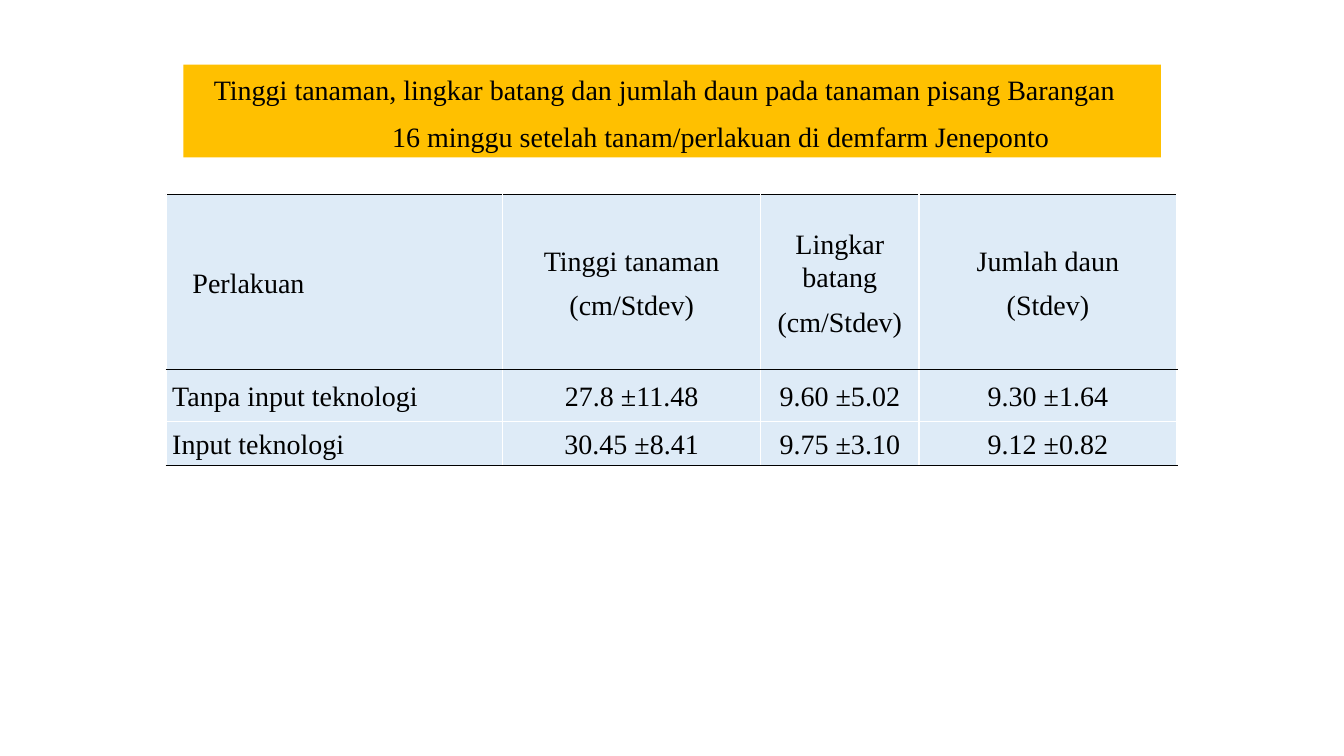
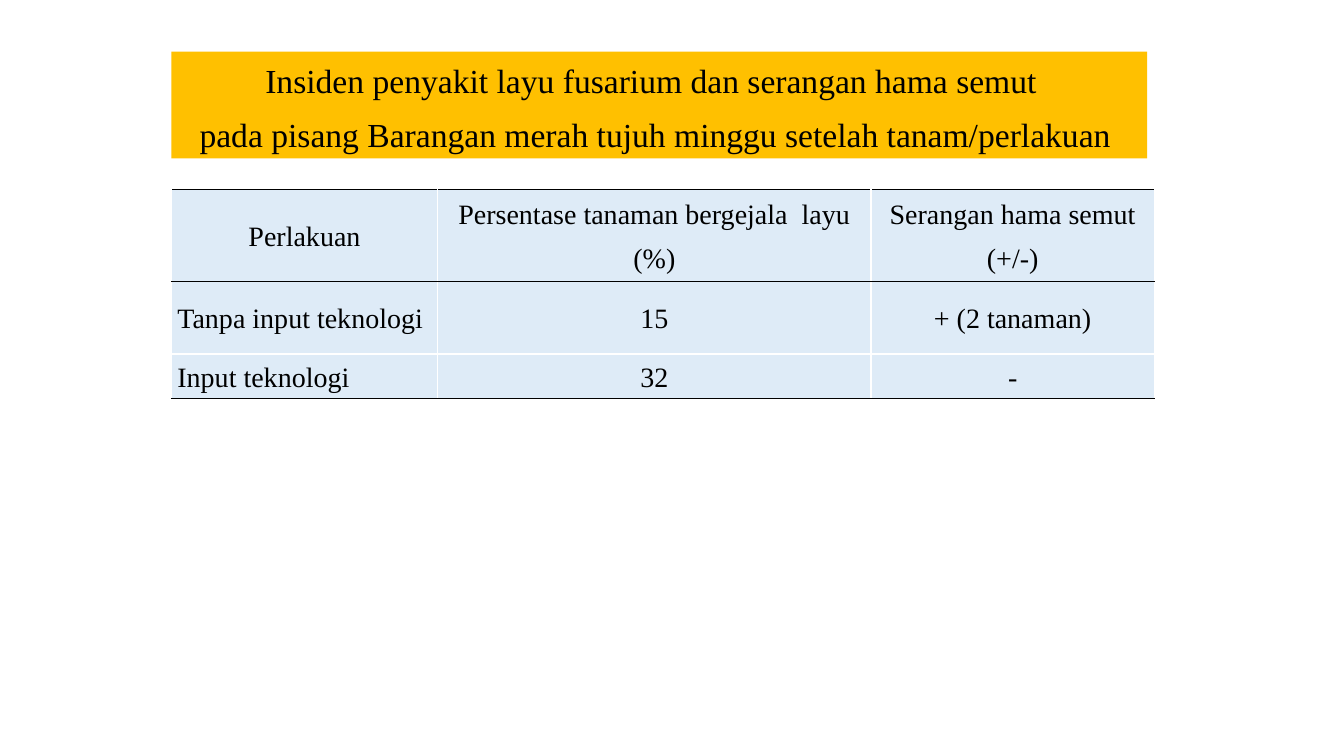
from lxml.etree import SubElement
from pptx import Presentation
from pptx.dml.color import RGBColor
from pptx.enum.shapes import MSO_SHAPE as SHAPE
from pptx.enum.text import MSO_ANCHOR as ANCHOR, PP_ALIGN as ALIGN
from pptx.oxml.ns import qn
from pptx.util import Cm, Pt

AMBER = RGBColor(0xFF, 0xC0, 0x00)
PALE_BLUE = RGBColor(0xDE, 0xEB, 0xF7)
BLACK = RGBColor(0, 0, 0)
WHITE = RGBColor(0xFF, 0xFF, 0xFF)
FONT = "Times New Roman"
PARAGRAPH = {"line_spacing": 1.07, "space_after": Pt(8)}
CELL = {
    "margin_left": Cm(0.15), "margin_right": Cm(0.15),
    "margin_top": Cm(0.03), "margin_bottom": 0,
    "vertical_anchor": ANCHOR.MIDDLE,
}
BANNER = {
    "word_wrap": True, "vertical_anchor": ANCHOR.TOP,
    "margin_left": Cm(0.25), "margin_right": Cm(0.45),
    "margin_top": Cm(0.13), "margin_bottom": Cm(0.13),
}

SLIDES = [
    {
        "banner": {
            "box": (4.62, 1.63, 24.64, 2.34), "size": 20, "indents": (0, 2.65),
            "lines": ["Tinggi tanaman, lingkar batang dan jumlah daun pada tanaman pisang Barangan ",
                      "16 minggu setelah tanam/perlakuan di demfarm Jeneponto"],
        },
        "table": {
            "left": 4.19, "top": 4.9,
            "widths": (8.48, 6.5, 3.99, 6.5), "heights": (4.42, 1.3, 1.12),
            "corner": (ALIGN.LEFT, 0.51),
            "rows": [
                ["Perlakuan", "Tinggi tanaman\n(cm/Stdev)", "Lingkar batang\n(cm/Stdev)", "Jumlah daun\n(Stdev)"],
                ["Tanpa input teknologi", "27.8 ±11.48", "9.60 ±5.02", "9.30 ±1.64"],
                ["Input teknologi", "30.45 ±8.41", "9.75 ±3.10", "9.12 ±0.82"],
            ],
        },
    },
    {
        "banner": {
            "box": (4.32, 1.3, 24.59, 2.69), "size": 24, "indents": (0, 0),
            "lines": ["Insiden penyakit layu fusarium dan serangan hama semut ",
                      "pada pisang Barangan merah tujuh minggu setelah tanam/perlakuan"],
        },
        "table": {
            "left": 4.32, "top": 4.78,
            "widths": (6.71, 10.92, 7.14), "heights": (2.31, 1.83, 1.12),
            "corner": (ALIGN.CENTER, 0),
            "rows": [
                ["Perlakuan", "Persentase tanaman bergejala  layu\n(%)", "Serangan hama semut\n(+/-)"],
                ["Tanpa input teknologi", "15", "+ (2 tanaman)"],
                ["Input teknologi", "32", "-"],
            ],
        },
    },
]


def set_all(target, values):
    """Set every attribute named in a dict of format values."""
    for name, value in values.items():
        setattr(target, name, value)


def write_lines(tf, lines, size, align, indents):
    """Write one paragraph per line, each with its own left indent."""
    for i, (line, indent) in enumerate(zip(lines, indents)):
        p = tf.add_paragraph() if i else tf.paragraphs[0]
        set_all(p, {**PARAGRAPH, "alignment": align})
        if indent:
            set_all_xml = {"marL": str(Cm(indent)), "indent": "0"}
            p._p.get_or_add_pPr().attrib.update(set_all_xml)
        r = p.add_run()
        r.text = line
        set_all(r.font, {"name": FONT, "size": Pt(size), "bold": False})
        r.font.color.rgb = BLACK


def add_banner(s, box, size, indents, lines):
    """Draw the amber title band in its box."""
    sp = s.shapes.add_shape(SHAPE.RECTANGLE, *map(Cm, box))
    sp.shadow.inherit = False
    sp.fill.solid()
    sp.fill.fore_color.rgb = AMBER
    sp.line.fill.background()
    set_all(sp.text_frame, BANNER)
    write_lines(sp.text_frame, lines, size, ALIGN.CENTER, indents)


def set_borders(cell, top, bottom):
    """Give a cell white sides and the given top and bottom colours."""
    tc_pr = cell._tc.get_or_add_tcPr()
    for side, color in (("L", WHITE), ("R", WHITE), ("T", top), ("B", bottom)):
        ln = SubElement(tc_pr, qn(f"a:ln{side}"), w=str(Pt(1)))
        fill = SubElement(ln, qn("a:solidFill"))
        SubElement(fill, qn("a:srgbClr"), val=str(color))


def add_data_table(s, left, top, widths, heights, corner, rows):
    """Draw the table with rules above and below the header and at the end."""
    frame = s.shapes.add_table(len(rows), len(widths), Cm(left), Cm(top),
                               Cm(sum(widths)), Cm(sum(heights)))
    table = frame.table
    set_all(table, {"first_row": False, "horz_banding": False})
    for column, width in zip(table.columns, widths):
        column.width = Cm(width)
    rules = [BLACK if i in (0, 1, len(rows)) else WHITE for i in range(len(rows) + 1)]
    for i, (row, height) in enumerate(zip(rows, heights)):
        table.rows[i].height = Cm(height)
        for j, text in enumerate(row):
            cell = table.cell(i, j)
            set_all(cell, CELL)
            set_borders(cell, rules[i], rules[i + 1])
            cell.fill.solid()
            cell.fill.fore_color.rgb = PALE_BLUE
            align, indent = (ALIGN.CENTER, 0) if j else (ALIGN.LEFT, 0) if i else corner
            lines = text.split("\n")
            write_lines(cell.text_frame, lines, 20, align, [indent] * len(lines))


def main():
    """Build both slides and save them."""
    prs = Presentation()
    set_all(prs, {"slide_width": Cm(33.87), "slide_height": Cm(19.05)})
    for content in SLIDES:
        s = prs.slides.add_slide(prs.slide_layouts[6])
        add_data_table(s, **content["table"])
        add_banner(s, **content["banner"])
    prs.save("out.pptx")


if __name__ == "__main__":
    main()
